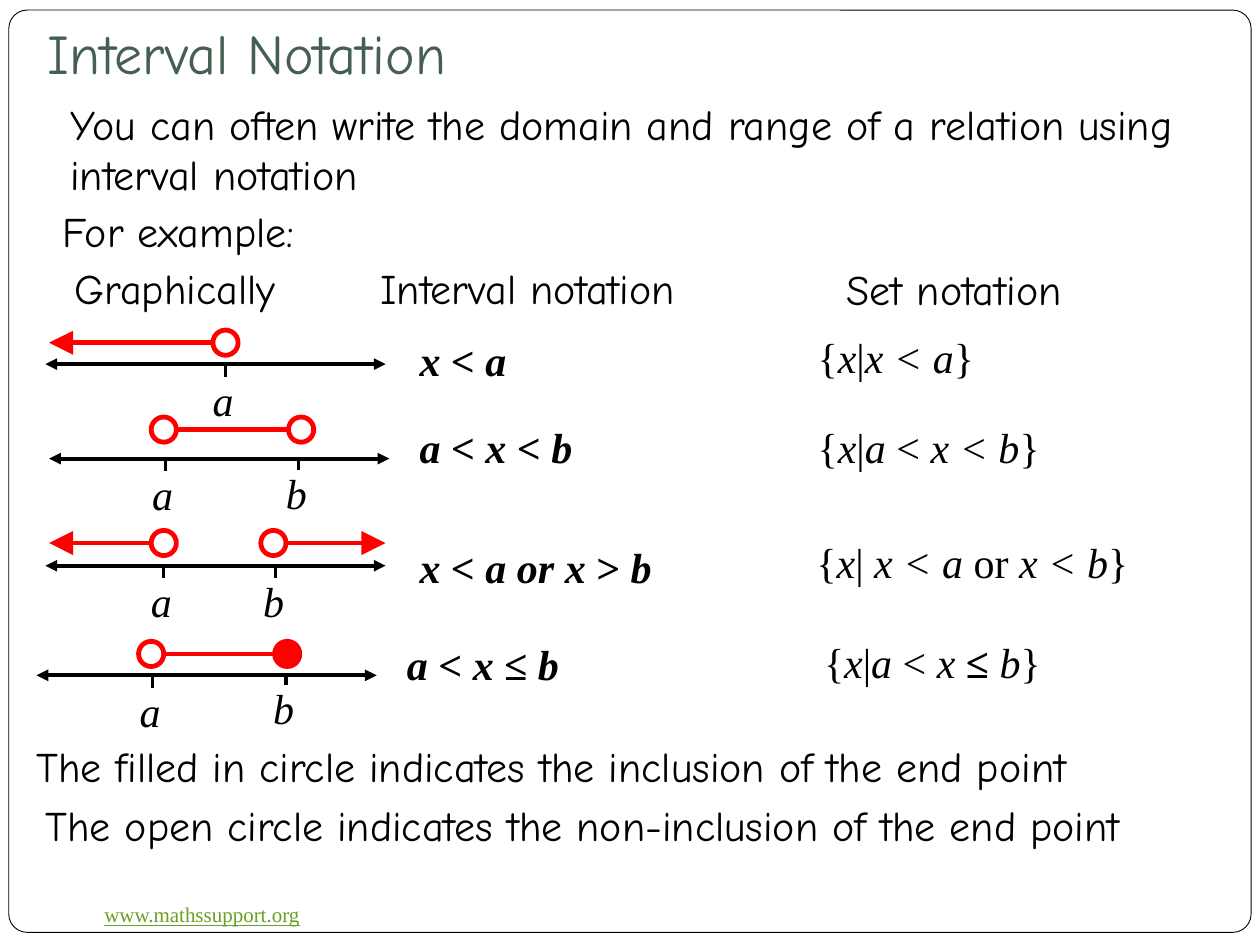
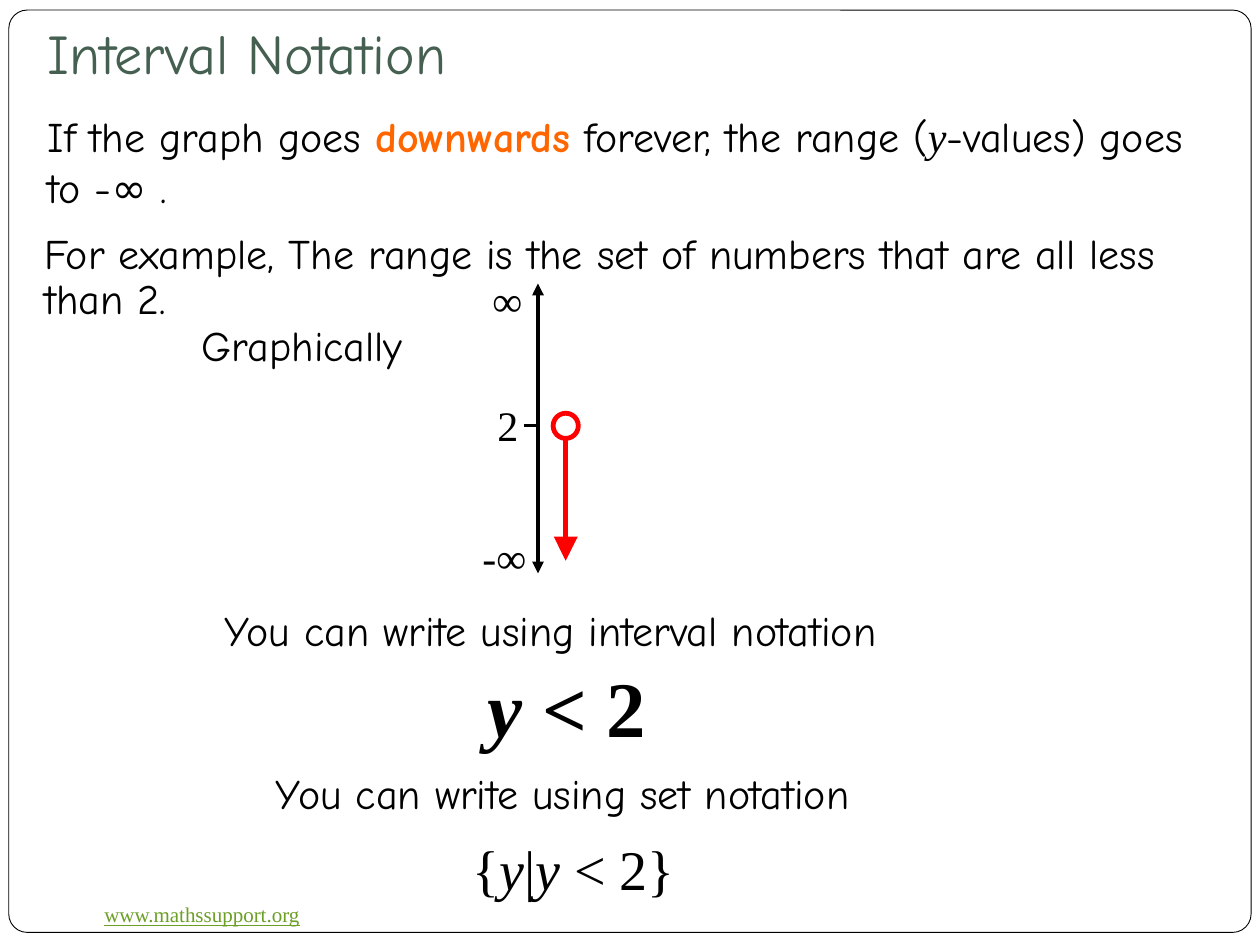
"""Build two slides that explain interval notation with number lines."""
from lxml import etree
from pptx import Presentation
from pptx.dml.color import RGBColor
from pptx.enum.shapes import MSO_CONNECTOR, MSO_SHAPE
from pptx.enum.text import MSO_ANCHOR, PP_ALIGN
from pptx.oxml.ns import qn
from pptx.util import Pt

PX = 9144
STRAIGHT = MSO_CONNECTOR.STRAIGHT
ROUNDED, OVAL = MSO_SHAPE.ROUNDED_RECTANGLE, MSO_SHAPE.OVAL
TOP, MIDDLE, BOTTOM = MSO_ANCHOR.TOP, MSO_ANCHOR.MIDDLE, MSO_ANCHOR.BOTTOM
LEFT = PP_ALIGN.LEFT
WHITE = RGBColor(0xFF, 0xFF, 0xFF)
BLACK = RGBColor(0x00, 0x00, 0x00)
RED = RGBColor(0xFF, 0x00, 0x00)
ORANGE = RGBColor(0xFF, 0x66, 0x00)
TITLE_GREEN = RGBColor(0x45, 0x5F, 0x51)
LINK_GREEN = RGBColor(0x6B, 0x9F, 0x25)
HAND, SERIF = "Comic Neue", "Times New Roman"
WIDE_MARGINS = (10, 5, 10, 5)


def add_text(slide, box, text, font=HAND, size=24, color=BLACK, bold=False,
             underline=False, spacing=0.9, anchor=TOP,
             margins=(8, 4, 8, 4), styles=None):
    """Add a text box; pieces between underscores are italic or take their entry in styles."""
    shape = slide.shapes.add_textbox(*(value * PX for value in box))
    frame = shape.text_frame
    frame.word_wrap = True
    frame.vertical_anchor = anchor
    (frame.margin_left, frame.margin_top,
     frame.margin_right, frame.margin_bottom) = (value * PX for value in margins)
    paragraph = frame.paragraphs[0]
    paragraph.alignment = LEFT
    paragraph.line_spacing = spacing
    for index, piece in enumerate(text.split("_")):
        if not piece:
            continue
        look = {"font": font, "color": color, "bold": bold, "italic": False}
        if index % 2:
            look.update((styles or {}).get(piece, {"italic": True}))
        run = paragraph.add_run()
        run.text = piece
        run.font.name = look["font"]
        run.font.size = Pt(size)
        run.font.bold = look["bold"]
        run.font.italic = look["italic"]
        run.font.underline = underline
        run.font.color.rgb = look["color"]


def add_line(slide, start, end, color, width, head=False, tail=False, arrow_size="med"):
    """Add a straight line with optional arrowheads at its start and end."""
    connector = slide.shapes.add_connector(
        STRAIGHT, *(value * PX for value in (*start, *end)))
    connector.line.color.rgb = color
    connector.line.width = Pt(width)
    properties = connector._element.spPr
    line = properties.find(qn("a:ln"))
    for tag, wanted in (("a:headEnd", head), ("a:tailEnd", tail)):
        if wanted:
            etree.SubElement(line, qn(tag), type="triangle", w=arrow_size, len=arrow_size)
    etree.SubElement(properties, qn("a:effectLst"))


presentation = Presentation()
presentation.slide_width = 1000 * PX
presentation.slide_height = 750 * PX
blank = presentation.slide_layouts[6]
overview, example = [presentation.slides.add_slide(blank) for _ in range(2)]

for slide in (overview, example):
    border = slide.shapes.add_shape(ROUNDED, 7 * PX, 8 * PX, 986 * PX, 732 * PX)
    border.adjustments[0] = 0.02
    border.shadow.inherit = False
    border.fill.solid()
    border.fill.fore_color.rgb = WHITE
    border.line.color.rgb = BLACK
    border.line.width = Pt(0.5)
    add_text(slide, (73, 711, 200, 30), "www.mathssupport.org", font=SERIF, size=12,
             color=LINK_GREEN, underline=True, spacing=1.0, margins=WIDE_MARGINS)
    add_text(slide, (28, 21, 800, 57), "Interval Notation", size=32, color=TITLE_GREEN,
             spacing=1.0, anchor=BOTTOM, margins=(10, 5, 10, 10))

add_text(overview, (46, 73, 907, 77),
         "You can often write the domain and range of a relation using interval notation",
         spacing=1.0, margins=WIDE_MARGINS)
for box, text in (
    ((42, 164, 216, 47), "For example:"),
    ((51, 209, 202, 53), "Graphically"),
    ((294, 209, 312, 53), "Interval notation"),
    ((664, 210, 266, 53), "Set notation"),
    ((21, 588, 923, 50), "The filled in circle indicates the inclusion of the end point"),
    ((28, 635, 892, 47), "The open circle indicates the non-inclusion of the end point"),
):
    add_text(overview, box, text)

for box, text in (
    ((325, 266, 216, 44), "_x_ < _a_"),
    ((325, 335, 216, 43), "_a < x_ < _b_"),
    ((325, 430, 223, 80), "_x_ < _a or x_ > _b_"),
    ((315, 507, 216, 43), "_a < x_ ≤ _b_"),
):
    add_text(overview, box, text, font=SERIF, bold=True)

for box, text in (
    ((641, 258, 180, 56), "{_x_|_x < a_}"),
    ((641, 331, 200, 52), "{_x_|_a_ < _x < b_}"),
    ((640, 407, 275, 83), "{_x_|_ x < a_ or _x < b_}"),
    ((646, 486, 195, 83), "{_x_|_a_ < _x __≤__ b_}"),
):
    add_text(overview, box, text, font=SERIF, anchor=MIDDLE,
             styles={"≤": {"bold": True}})

number_lines = (
    {"left": 36, "axis": 289, "ray": 272, "rays": [(39, 169, True, False)],
     "ticks": [("a", 179, 289)], "circles": [(169, False)]},
    {"left": 39, "axis": 364, "ray": 341, "rays": [(141, 231, False, False)],
     "ticks": [("a", 131, 364), ("b", 237, 363)], "circles": [(120, False), (229, False)]},
    {"left": 36, "axis": 449, "ray": 431,
     "rays": [(39, 119, True, False), (226, 306, False, True)],
     "ticks": [("a", 130, 449), ("b", 219, 449)], "circles": [(120, False), (207, False)]},
    {"left": 29, "axis": 536, "ray": 519, "rays": [(131, 221, False, False)],
     "ticks": [("a", 121, 536), ("b", 227, 534)], "circles": [(110, False), (218, True)]},
)
circles = [(example, 439, 328, False)]
for row in number_lines:
    axis, ray = row["axis"], row["ray"]
    add_line(overview, (row["left"], axis), (row["left"] + 270, axis), BLACK, 2.25,
             head=True, tail=True)
    for start, end, head, tail in row["rays"]:
        add_line(overview, (start, ray), (end, ray), RED, 2.75, head, tail, "lg")
    for name, x, y in row["ticks"]:
        add_line(overview, (x, y), (x, y + 10), BLACK, 1.75)
        add_text(overview, (x - 20, y + 3, 40, 50), f"_{name}_", font=SERIF,
                 spacing=1.0, margins=WIDE_MARGINS)
    circles += [(overview, left, ray - 10, filled) for left, filled in row["circles"]]

add_text(example, (28, 83, 938, 68),
         "If the graph goes _downwards_ forever, the range (_y_-values) goes to -∞ .",
         spacing=1.0, margins=WIDE_MARGINS,
         styles={"downwards": {"color": ORANGE, "bold": True},
                 "y": {"font": SERIF, "italic": True}})
for box, text in (
    ((27, 181, 915, 80),
     "For example, The range is the set of numbers that are all less than 2."),
    ((152, 254, 202, 53), "Graphically"),
    ((170, 480, 652, 53), "You can write using interval notation"),
    ((211, 610, 520, 53), "You can write using set notation"),
):
    add_text(example, box, text)
add_text(example, (379, 527, 201, 53), "_y_ < 2", font=SERIF, size=45, bold=True)
add_text(example, (367, 664, 207, 56), "{_y_|_y_ < 2}", font=SERIF, size=32, anchor=MIDDLE)

add_line(example, (427, 455), (427, 225), BLACK, 2.25, head=True, tail=True)
add_line(example, (416, 338), (426, 338), BLACK, 1.75)
add_line(example, (449, 349), (449, 445), RED, 2.75, tail=True, arrow_size="lg")
for left, top, name in ((381, 213, "∞"), (385, 312, "2"), (373, 417, "-∞")):
    add_text(example, (left, top, 60, 50), name, font=SERIF, spacing=1.0,
             margins=WIDE_MARGINS)

for slide, left, top, filled in circles:
    circle = slide.shapes.add_shape(OVAL, left * PX, top * PX, 20 * PX, 20 * PX)
    circle.shadow.inherit = False
    circle.line.color.rgb = RED
    circle.line.width = Pt(2.75)
    if filled:
        circle.fill.solid()
        circle.fill.fore_color.rgb = RED
    else:
        circle.fill.background()

presentation.save("out.pptx")
